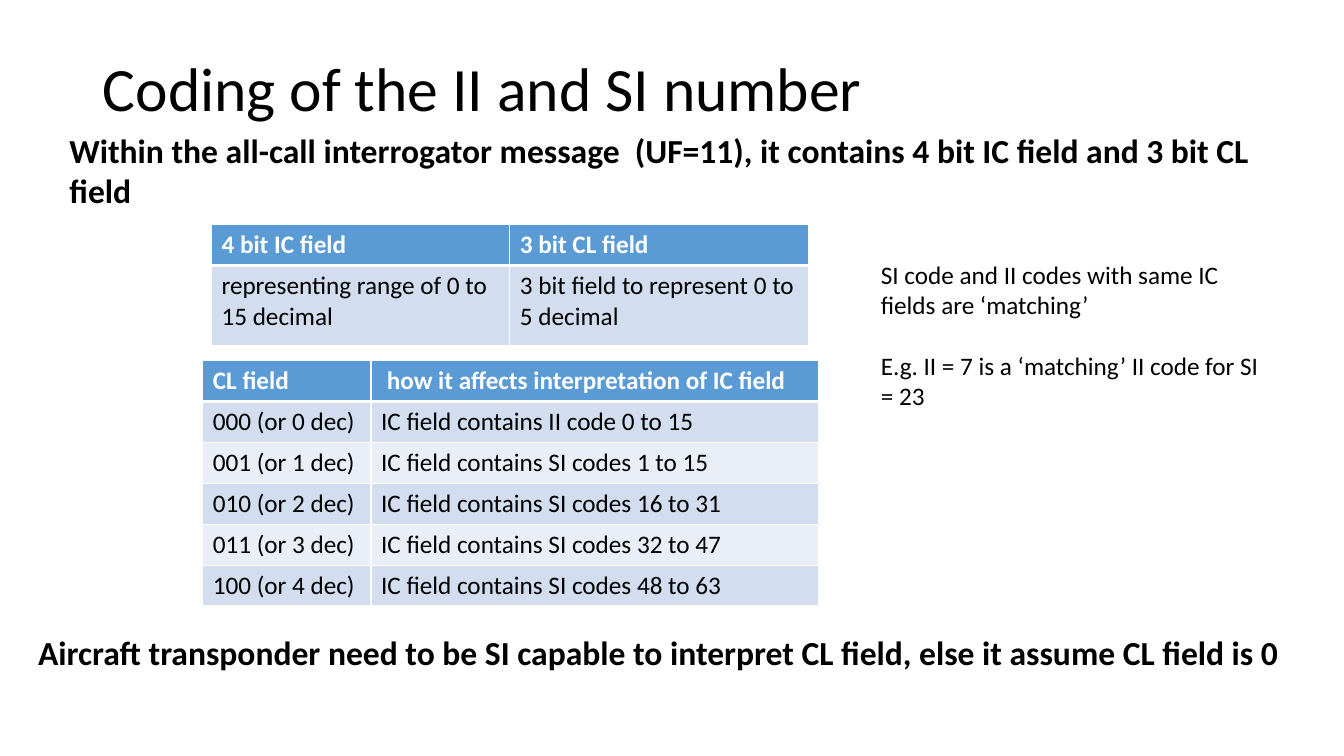
"""Build the slide on the coding of the II and SI number."""

from dataclasses import dataclass

from lxml.etree import SubElement
from pptx import Presentation
from pptx.dml.color import RGBColor
from pptx.enum.text import MSO_ANCHOR
from pptx.oxml.ns import qn
from pptx.util import Cm, Pt

BLACK = RGBColor(0x00, 0x00, 0x00)
WHITE = RGBColor(0xFF, 0xFF, 0xFF)
HEADER_BLUE = RGBColor(0x5B, 0x9B, 0xD5)
BAND_BLUES = (RGBColor(0xD2, 0xDE, 0xEF), RGBColor(0xEA, 0xEF, 0xF7))


@dataclass(frozen=True)
class TextBlock:
    left: float
    top: float
    width: float
    height: float
    paragraphs: tuple[str, ...]
    size: int
    bold: bool = False
    anchor: MSO_ANCHOR = MSO_ANCHOR.TOP
    line_spacing: float = 1.0
    gap: int = 0


@dataclass(frozen=True)
class CodeTable:
    left: float
    top: float
    column_widths: tuple[float, ...]
    row_heights: tuple[float, ...]
    rows: tuple[tuple[str, ...], ...]


TEXT_BLOCKS = (
    TextBlock(2.34, 1.02, 29.31, 2.57, ("Coding of the II and SI number",), 44,
              anchor=MSO_ANCHOR.MIDDLE, line_spacing=0.9),
    TextBlock(1.5, 3.15, 31.37, 2.31,
              ("Within the all-call interrogator message  (UF=11), "
               "it contains 4 bit IC field and 3 bit CL field",), 24, bold=True),
    TextBlock(0.71, 15.8, 32.16, 1.27,
              ("Aircraft transponder need to be SI capable to interpret CL field, "
               "else it assume CL field is 0",), 24, bold=True),
    TextBlock(21.95, 6.4, 10.19, 4.11,
              ("SI code and II codes with same IC fields are ‘matching’",
               "E.g. II = 7 is a ‘matching’ II code for SI = 23"), 18, gap=22),
)

CODE_TABLES = (
    CodeTable(5.33, 5.66, (7.52, 7.52), (1.03, 2.01), (
        ("4 bit IC field", "3 bit CL field"),
        ("representing range of 0 to 15 decimal", "3 bit field to represent 0 to 5 decimal"),
    )),
    CodeTable(5.11, 9.09, (4.24, 11.28), (1.03,) * 6, (
        ("CL field", " how it affects interpretation of IC field"),
        ("000 (or 0 dec)", "IC field contains II code 0 to 15"),
        ("001 (or 1 dec)", "IC field contains SI codes 1 to 15"),
        ("010 (or 2 dec)", "IC field contains SI codes 16 to 31"),
        ("011 (or 3 dec)", "IC field contains SI codes 32 to 47"),
        ("100 (or 4 dec)", "IC field contains SI codes 48 to 63"),
    )),
)


def write_run(paragraph, text: str, size: int, bold: bool, color: RGBColor) -> None:
    """Add one formatted run to a paragraph."""
    run = paragraph.add_run()
    run.text = text
    for name, value in {"name": "Calibri", "size": Pt(size), "bold": bold}.items():
        setattr(run.font, name, value)
    run.font.color.rgb = color


def draw_text(slide, block: TextBlock) -> None:
    """Draw a text block with its paragraphs."""
    shape = slide.shapes.add_textbox(
        Cm(block.left), Cm(block.top), Cm(block.width), Cm(block.height))
    frame = shape.text_frame
    for name, value in {"word_wrap": True, "vertical_anchor": block.anchor}.items():
        setattr(frame, name, value)
    for index, text in enumerate(block.paragraphs):
        paragraph = frame.add_paragraph() if index else frame.paragraphs[0]
        spacing = {"line_spacing": block.line_spacing,
                   "space_before": Pt(block.gap if index else 0)}
        for name, value in spacing.items():
            setattr(paragraph, name, value)
        write_run(paragraph, text, block.size, block.bold, BLACK)


def draw_borders(cell, bottom_width: int, top_width: int) -> None:
    """Give a cell white borders."""
    properties = cell._tc.get_or_add_tcPr()
    widths = {"a:lnL": 1, "a:lnR": 1, "a:lnT": top_width, "a:lnB": bottom_width}
    for tag, width in widths.items():
        line = SubElement(properties, qn(tag), w=str(Pt(width)))
        fill = SubElement(line, qn("a:solidFill"))
        SubElement(fill, qn("a:srgbClr"), val=str(WHITE))


def draw_table(slide, code_table: CodeTable) -> None:
    """Draw a table with a blue header and banded rows."""
    table = slide.shapes.add_table(
        len(code_table.rows), len(code_table.column_widths),
        Cm(code_table.left), Cm(code_table.top),
        Cm(sum(code_table.column_widths)), Cm(sum(code_table.row_heights))).table
    for column, width in zip(table.columns, code_table.column_widths):
        column.width = Cm(width)
    for row_index, texts in enumerate(code_table.rows):
        table.rows[row_index].height = Cm(code_table.row_heights[row_index])
        is_header = row_index == 0
        for column_index, text in enumerate(texts):
            cell = table.cell(row_index, column_index)
            draw_borders(cell, 3 if is_header else 1, 3 if row_index == 1 else 1)
            cell.fill.solid()
            cell.fill.fore_color.rgb = HEADER_BLUE if is_header else BAND_BLUES[(row_index - 1) % 2]
            write_run(cell.text_frame.paragraphs[0], text, 18, is_header,
                      WHITE if is_header else BLACK)


def main() -> None:
    """Create and save the presentation."""
    presentation = Presentation()
    for name, value in {"slide_width": Cm(33.87), "slide_height": Cm(19.05)}.items():
        setattr(presentation, name, value)
    slide = presentation.slides.add_slide(presentation.slide_layouts[6])
    for block in TEXT_BLOCKS:
        draw_text(slide, block)
    for code_table in CODE_TABLES:
        draw_table(slide, code_table)
    presentation.save("out.pptx")


if __name__ == "__main__":
    main()
